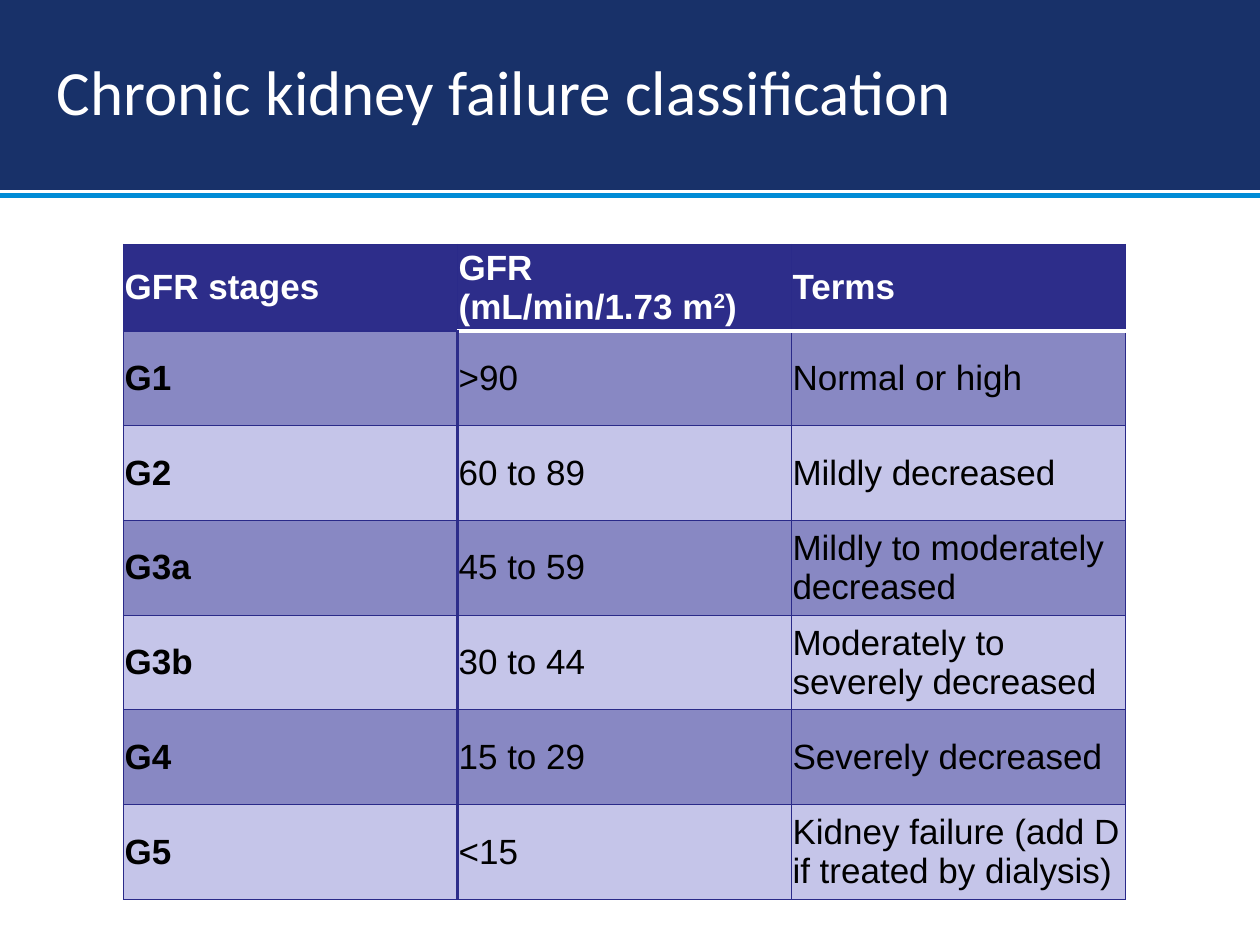
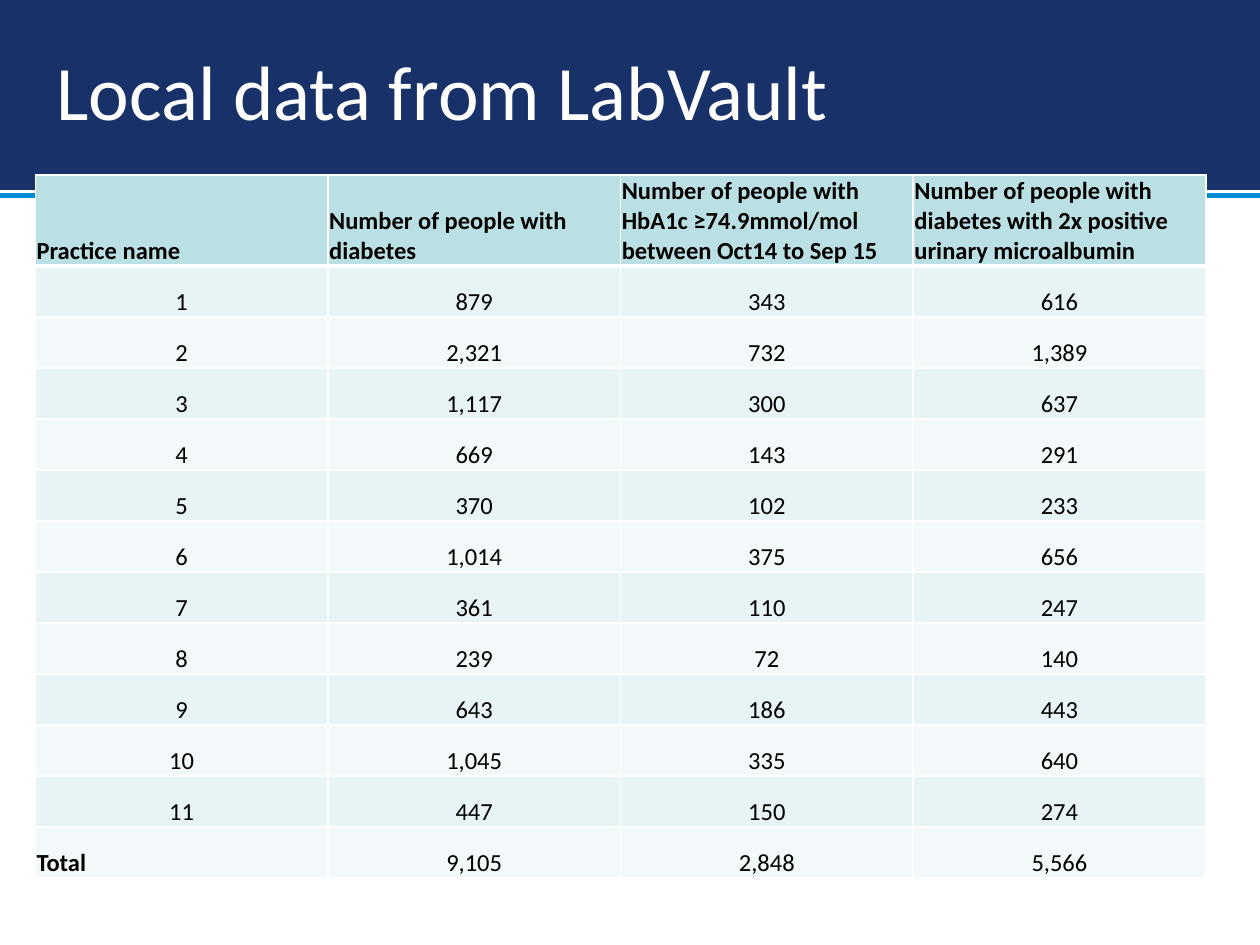
from dataclasses import dataclass

import pptx
import pptx.dml.color
import pptx.enum.shapes
import pptx.enum.text
import pptx.oxml
import pptx.oxml.ns
import pptx.util

ANCHOR = pptx.enum.text.MSO_ANCHOR
ALIGN = pptx.enum.text.PP_ALIGN
COLS, ROWS = 100, 75  # slide grid
WIDE, TALL = pptx.util.Inches(10), pptx.util.Inches(7.5)


@dataclass(frozen=True)
class Theme:
    navy: str = "183169"
    sky: str = "008CD6"
    white: str = "FFFFFF"
    black: str = "000000"
    indigo: str = "2D2D8A"
    edge: str = "2A2A89"
    violet: str = "8888C3"
    lilac: str = "C5C5E9"
    teal: str = "BBE0E3"
    mint: str = "E7F3F4"
    mist: str = "F3F9FA"
    face: str = "Calibri"
    sans: str = "Arial"
    small: int = 14
    text: int = 20
    title: int = 36
    large: int = 44
    rule: int = 3


THEME = Theme()


@dataclass(frozen=True)
class Look:
    """Style of one table; bands holds the two body fills in turn."""
    font: str
    size: int
    ink: str
    head: str
    bands: tuple
    anchor: object
    foot: float


STAGE = Look(THEME.sans, THEME.text, THEME.white, THEME.indigo,
             (THEME.violet, THEME.lilac), ANCHOR.MIDDLE, 0.1)
LOCAL = Look(THEME.face, THEME.small, THEME.black, THEME.teal,
             (THEME.mint, THEME.mist), ANCHOR.BOTTOM, 0)

STAGES = [
    ("GFR stages", "GFR\n(mL/min/1.73 m^2^)", "Terms"),
    ("G1", ">90", "Normal or high"),
    ("G2", "60 to 89", "Mildly decreased"),
    ("G3a", "45 to 59", "Mildly to moderately decreased"),
    ("G3b", "30 to 44", "Moderately to severely decreased"),
    ("G4", "15 to 29", "Severely decreased"),
    ("G5", "<15", "Kidney failure (add D if treated by dialysis)"),
]
COUNTS = [
    ("Practice name", "Number of people with diabetes",
     "Number of people with HbA1c ≥74.9mmol/mol between Oct14 to Sep 15",
     "Number of people with diabetes with 2x positive urinary microalbumin"),
    ("1", "879", "343", "616"),
    ("2", "2,321", "732", "1,389"),
    ("3", "1,117", "300", "637"),
    ("4", "669", "143", "291"),
    ("5", "370", "102", "233"),
    ("6", "1,014", "375", "656"),
    ("7", "361", "110", "247"),
    ("8", "239", "72", "140"),
    ("9", "643", "186", "443"),
    ("10", "1,045", "335", "640"),
    ("11", "447", "150", "274"),
    ("Total", "9,105", "2,848", "5,566"),
]


def across(n):
    return round(WIDE * n / COLS)


def down(n):
    return round(TALL * n / ROWS)


def place(box):
    left, top, width, height = box
    return across(left), down(top), across(width), down(height)


def rgb(code):
    return pptx.dml.color.RGBColor.from_string(code)


def write(para, text, font, size, ink, bold=False):
    """Add runs; text between carets is raised, a newline breaks the line."""
    for i, part in enumerate(text.split("^")):
        for j, piece in enumerate(part.split("\n")):
            if j:
                para.add_line_break()
            if not piece:
                continue
            run = para.add_run()
            run.text = piece
            run.font.name = font
            run.font.size = pptx.util.Pt(size)
            run.font.bold = bold
            run.font.color.rgb = rgb(ink)
            if i % 2:
                run._r.get_or_add_rPr().set("baseline", "30000")


def border(cell, sides):
    props = cell._tc.get_or_add_tcPr()
    for side in "LRTB":
        ink, width = sides[side]
        props.append(pptx.oxml.parse_xml(
            f'<a:ln{side} {pptx.oxml.ns.nsdecls("a")} w="{pptx.util.Pt(width)}">'
            f'<a:solidFill><a:srgbClr val="{ink}"/></a:solidFill></a:ln{side}>'))


def header(slide, box, text, size):
    """Draw the band filling the box, the rule below it and the title."""
    left, top, width, height = box
    low = top + height + 0.6
    rule = slide.shapes.add_connector(
        pptx.enum.shapes.MSO_CONNECTOR.STRAIGHT,
        across(left), down(low), across(left + width), down(low))
    rule._element.spPr.append(
        pptx.oxml.parse_xml(f'<a:effectLst {pptx.oxml.ns.nsdecls("a")}/>'))
    band = slide.shapes.add_shape(
        pptx.enum.shapes.MSO_SHAPE.RECTANGLE, *place(box))
    band.shadow.inherit = False
    band.fill.solid()
    band.fill.fore_color.rgb = rgb(THEME.navy)
    for part, ink in ((rule, THEME.sky), (band, THEME.navy)):
        part.line.color.rgb = rgb(ink)
        part.line.width = pptx.util.Pt(THEME.rule)
    label = slide.shapes.add_textbox(
        *place((left + 3.5, top + 2.8, 0.75 * width, 8.7)))
    frame = label.text_frame
    frame.word_wrap = True
    frame.vertical_anchor = ANCHOR.MIDDLE
    write(frame.paragraphs[0], text, THEME.face, size, THEME.white)


def grid(slide, box, data, look, top, sides, bold, align):
    """Draw a table; sides, bold and align are rules on row and column."""
    count, span = len(data), len(data[0])
    table = slide.shapes.add_table(count, span, *place(box)).table
    for col in table.columns:
        col.width = across(box[2] / span)
    for r, row in enumerate(data):
        table.rows[r].height = down((box[3] - top) / (count - 1) if r else top)
        for c, text in enumerate(row):
            cell = table.cell(r, c)
            border(cell, sides(r, c))
            cell.fill.solid()
            cell.fill.fore_color.rgb = rgb(
                look.bands[(r - 1) % 2] if r else look.head)
            cell.vertical_anchor = look.anchor
            cell.margin_left = cell.margin_right = across(0.1)
            cell.margin_top, cell.margin_bottom = down(0.1), down(look.foot)
            para = cell.text_frame.paragraphs[0]
            para.alignment = align(r, c)
            write(para, text, look.font, look.size,
                  THEME.black if r else look.ink, bold(r, c))


def stages(slide, box):
    thin = (THEME.edge, 0.75)
    thick = (THEME.indigo, 2)
    white = (THEME.white, 2)

    def sides(r, c):
        return {"L": thick if r and c == 1 else thin,
                "R": thick if r and c == 0 else thin,
                "T": white if r == 1 and c else thin,
                "B": white if r == 0 and c else thin}

    grid(slide, box, STAGES, STAGE, 6.4, sides,
         lambda r, c: r == 0 or c == 0, lambda r, c: ALIGN.LEFT)


def counts(slide, box):
    thin, thick = (THEME.white, 1), (THEME.white, 3)
    last = len(COUNTS) - 1

    def sides(r, c):
        return {"L": thin, "R": thin, "T": thick if r == 1 else thin,
                "B": thick if r == 0 else thin}

    def label(r, c):
        return r == 0 or (r == last and c == 0)

    grid(slide, box, COUNTS, LOCAL, 7.2, sides, label,
         lambda r, c: ALIGN.LEFT if label(r, c) else ALIGN.CENTER)


def main():
    deck = pptx.Presentation()
    deck.slide_width, deck.slide_height = WIDE, TALL
    for title, size, draw, box in (
            ("Chronic kidney failure classification", THEME.title,
             stages, (9.8, 19.4, 79.5, 51.5)),
            ("Local data from LabVault", THEME.large,
             counts, (2.8, 13.9, 92.9, 55.8))):
        slide = deck.slides.add_slide(deck.slide_layouts[6])
        header(slide, (0, 0, COLS, 14.9), title, size)
        draw(slide, box)
    deck.save("out.pptx")


if __name__ == "__main__":
    main()
